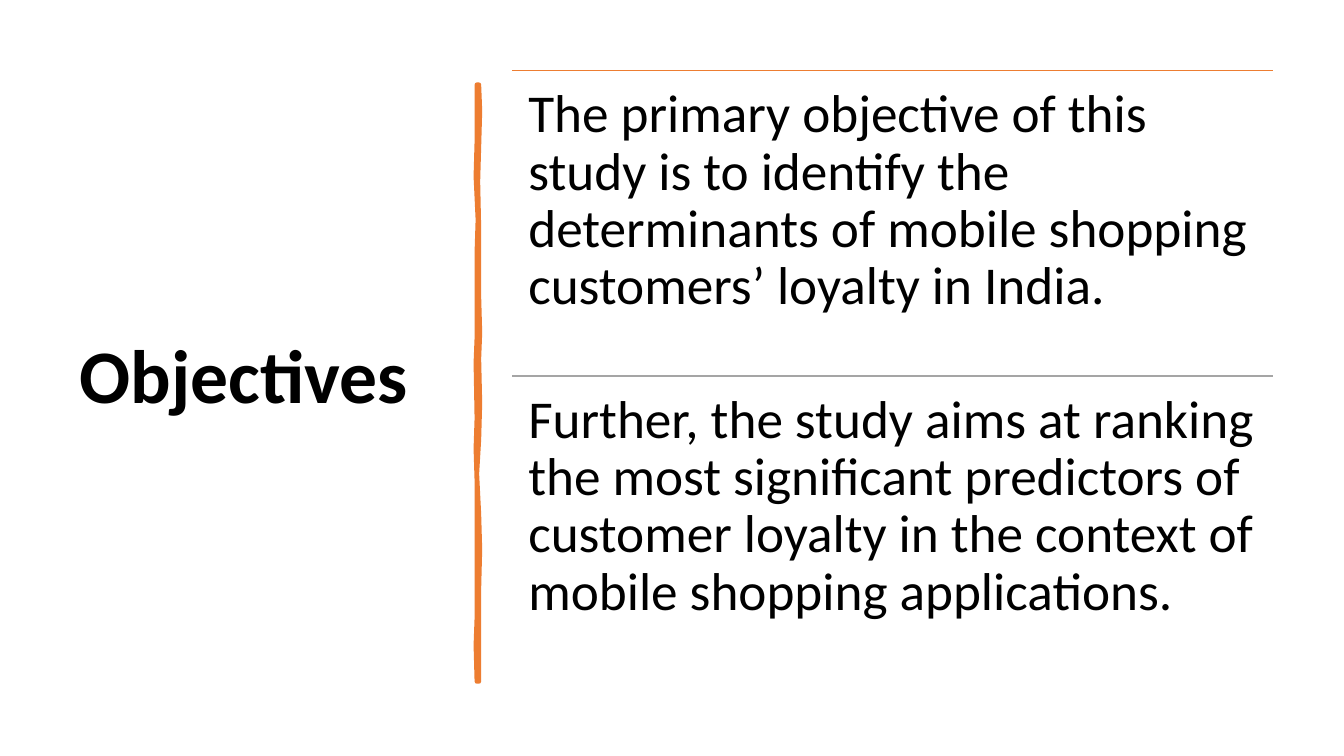
"""Build the Objectives slide: a title, a hand-drawn bar and two ruled statements."""
from lxml import etree
from pptx import Presentation, util as u
from pptx.dml.color import RGBColor
from pptx.enum import shapes, text
from pptx.oxml.ns import qn

TITLE = "Objectives"
STATEMENTS = [
    ("orange", "The primary objective of this study is to identify the determinants "
               "of mobile shopping customers’ loyalty in India."),
    ("grey", "Further, the study aims at ranking the most significant predictors of "
             "customer loyalty in the context of mobile shopping applications."),
]
COLORS = {"orange": "ED7D31", "grey": "A5A5A5", "black": "000000"}
FONT = "Calibri"
WIDTH, HEIGHT = 13.33, 7.5
TOP = 0.7
COLUMN_LEFT, COLUMN_WIDTH, ROW_HEIGHT = 5.08, 7.55, 3.03
INSET = 0.16
BAR_RIGHT = [(4.75, 0.84), (4.76, 1.1), (4.75, 1.46), (4.74, 1.8), (4.75, 2.26),
             (4.75, 2.94), (4.76, 3.3), (4.75, 3.56), (4.76, 4.0), (4.75, 4.36),
             (4.73, 4.7), (4.75, 5.1), (4.76, 5.45), (4.75, 5.84), (4.75, 6.76)]
BAR_LEFT = [(4.73, 6.76), (4.72, 6.4), (4.73, 6.13), (4.73, 5.57), (4.73, 4.77),
            (4.72, 4.45), (4.73, 4.15), (4.72, 3.6), (4.73, 3.35), (4.73, 2.5),
            (4.74, 2.18), (4.72, 1.75), (4.73, 1.4), (4.73, 0.84)]


def color(name):
    return RGBColor.from_string(COLORS[name])


def place(box, left, top, width, height):
    box.left, box.top = u.Inches(left), u.Inches(top)
    box.width, box.height = u.Inches(width), u.Inches(height)


def write(box, words, size, anchor, bold=False):
    frame = box.text_frame
    frame.word_wrap = True
    frame.auto_size = text.MSO_AUTO_SIZE.NONE
    frame.vertical_anchor = anchor
    para = frame.paragraphs[0]
    para.text = words
    para.alignment = text.PP_ALIGN.LEFT
    para.line_spacing = 0.9
    para.font.name, para.font.size, para.font.bold = FONT, u.Pt(size), bold
    para.font.color.rgb = color("black")
    return frame


def add_bar(page):
    points = [(u.Inches(x), u.Inches(y)) for x, y in BAR_RIGHT + BAR_LEFT]
    builder = page.shapes.build_freeform(*points[0])
    builder.add_line_segments(points[1:], close=True)
    bar = builder.convert_to_shape()
    bar.shadow.inherit = False
    bar.fill.solid()
    bar.fill.fore_color.rgb = color("orange")
    bar.line.color.rgb = color("orange")
    bar.line.width = u.Pt(3.25)
    etree.SubElement(bar.line._get_or_add_ln(), qn("a:round"))


def add_statement(page, row, rule_color, words):
    top = TOP + row * ROW_HEIGHT
    rule = page.shapes.add_connector(
        shapes.MSO_CONNECTOR.STRAIGHT, u.Inches(COLUMN_LEFT), u.Inches(top),
        u.Inches(COLUMN_LEFT + COLUMN_WIDTH), u.Inches(top))
    rule.line.color.rgb = color(rule_color)
    rule.line.width = u.Pt(1)
    etree.SubElement(rule._element.spPr, qn("a:effectLst"))
    box = page.shapes.add_textbox(0, 0, 0, 0)
    place(box, COLUMN_LEFT, top, COLUMN_WIDTH, ROW_HEIGHT)
    frame = write(box, words, 38, text.MSO_ANCHOR.TOP)
    frame.margin_left = frame.margin_right = u.Inches(INSET)
    frame.margin_top = frame.margin_bottom = u.Inches(INSET)


def main():
    deck = Presentation()
    deck.slide_width, deck.slide_height = u.Inches(WIDTH), u.Inches(HEIGHT)
    page = deck.slides.add_slide(deck.slide_layouts[5])
    title = page.shapes.title
    place(title, 0.69, TOP, 3.74, 6.11)
    write(title, TITLE, 54, text.MSO_ANCHOR.MIDDLE, bold=True)
    add_bar(page)
    for row, (rule_color, words) in enumerate(STATEMENTS):
        add_statement(page, row, rule_color, words)
    deck.save("out.pptx")


if __name__ == "__main__":
    main()
